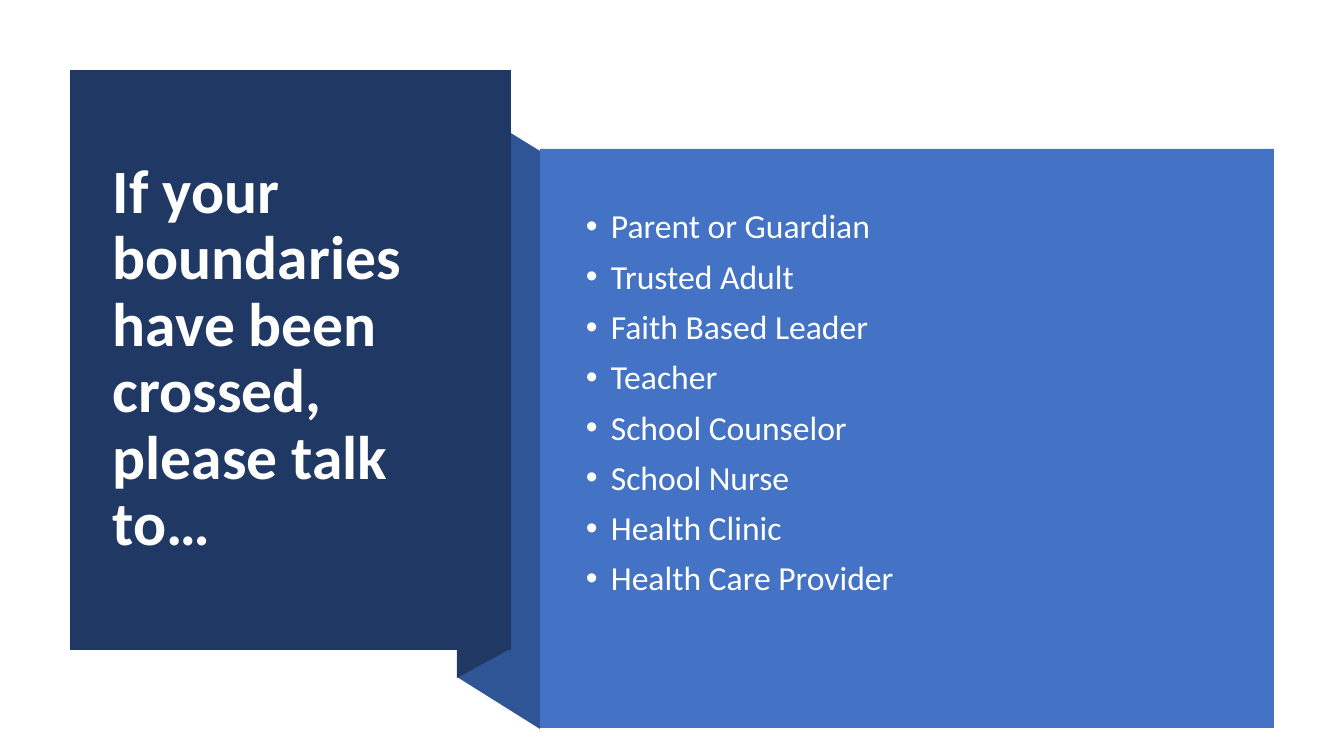
from lxml.etree import SubElement
from pptx import Presentation
from pptx.dml.color import RGBColor
from pptx.enum.shapes import MSO_SHAPE as Shape
from pptx.enum.text import MSO_ANCHOR as Anchor
from pptx.oxml.ns import qn
from pptx.util import Emu, Pt

TITLE = "If your boundaries have been crossed, please talk to…"
CONTACTS = [
    "Parent or Guardian",
    "Trusted Adult",
    "Faith Based Leader",
    "Teacher",
    "School Counselor",
    "School Nurse",
    "Health Clinic",
    "Health Care Provider",
]
COLORS = {
    "navy": "203864",
    "fold": "2F5597",
    "panel": "4472C4",
    "title": "FFFFFF",
    "list": "FEFFFF",
}
RIBBON = [
    ("fold", [(540, 729), (457, 677), (457, 100), (540, 151)]),
    ("navy", [(510, 649), (457, 678), (457, 99), (510, 70)]),
    ("navy", [(70, 70), (511, 70), (511, 650), (70, 650)]),
]
PANEL = (540, 149, 734, 579)
TITLE_BOX = (103, 108, 374, 503)
LIST_BOX = (576, 190, 656, 478)
LIST_BOTTOM_INSET = 55
BULLET_INDENT = 25

SLIDE_PX = (1344, 756)
SCALE = 12192000 / SLIDE_PX[0]


def px(length):
    return Emu(round(length * SCALE))


def paint(shape, color):
    shape.shadow.inherit = False
    shape.fill.solid()
    shape.fill.fore_color.rgb = RGBColor.from_string(COLORS[color])
    shape.line.fill.background()


def add_text(page, frame, lines, size, color, bold=False):
    box = page.shapes.add_textbox(*map(px, frame))
    text = box.text_frame
    text.word_wrap = True
    text.vertical_anchor = Anchor.MIDDLE
    text.text = "\n".join(lines)
    for para in text.paragraphs:
        para.line_spacing = 0.9
        font = para.runs[0].font
        font.name = "Calibri"
        font.size = Pt(size)
        font.bold = bold
        font.color.rgb = RGBColor.from_string(COLORS[color])
    return text


def add_bullet(para):
    para.space_before = Pt(10)
    props = para._p.get_or_add_pPr()
    props.set("marL", str(px(BULLET_INDENT)))
    props.set("indent", str(-px(BULLET_INDENT)))
    SubElement(props, qn("a:buFont")).set("typeface", "Arial")
    SubElement(props, qn("a:buChar")).set("char", "•")


def main():
    deck = Presentation()
    deck.slide_width, deck.slide_height = map(px, SLIDE_PX)
    page = deck.slides.add_slide(deck.slide_layouts[6])

    for color, points in RIBBON:
        outline = page.shapes.build_freeform(*points[0], scale=SCALE)
        outline.add_line_segments(points[1:], close=True)
        paint(outline.convert_to_shape(), color)

    add_text(page, TITLE_BOX, [TITLE], 44, "title", bold=True)

    paint(page.shapes.add_shape(Shape.RECTANGLE, *map(px, PANEL)), "panel")
    contacts = add_text(page, LIST_BOX, CONTACTS, 24, "list")
    contacts.margin_bottom = px(LIST_BOTTOM_INSET)
    for para in contacts.paragraphs:
        add_bullet(para)

    deck.save("out.pptx")


if __name__ == "__main__":
    main()
